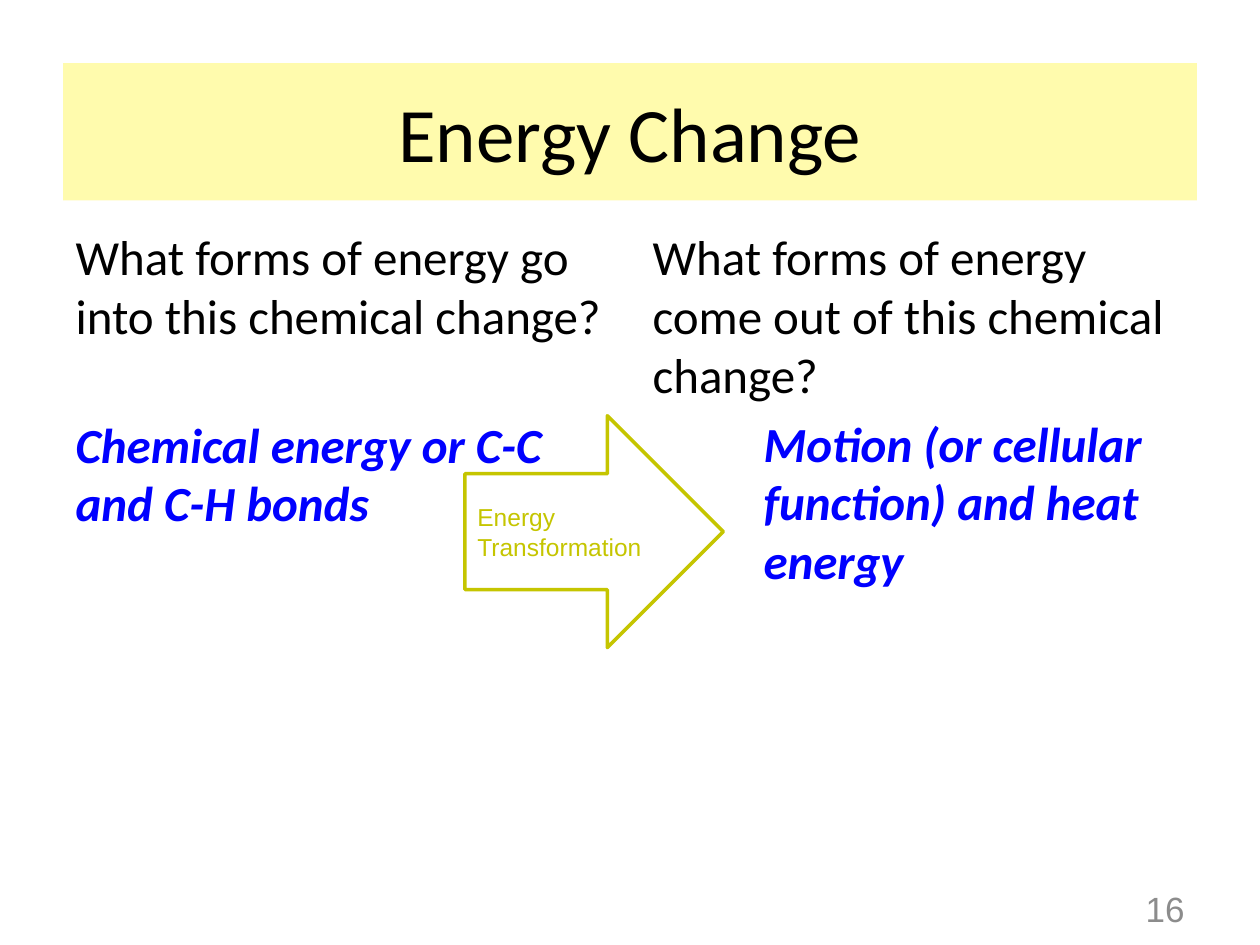
from lxml import etree
from pptx import Presentation
from pptx.dml.color import RGBColor
from pptx.enum.shapes import MSO_SHAPE
from pptx.enum.text import MSO_ANCHOR, MSO_AUTO_SIZE, PP_ALIGN
from pptx.oxml.ns import qn
from pptx.util import Inches, Pt

RIGHT_ARROW = MSO_SHAPE.RIGHT_ARROW
MIDDLE, TOP = MSO_ANCHOR.MIDDLE, MSO_ANCHOR.TOP
LEFT, CENTER, RIGHT = PP_ALIGN.LEFT, PP_ALIGN.CENTER, PP_ALIGN.RIGHT
NO_AUTOFIT = MSO_AUTO_SIZE.NONE

WIDTH, HEIGHT = 10, 7.5
MARGIN, GUTTER = 0.5, 0.16
COLUMN = (WIDTH - 2 * MARGIN - GUTTER) / 2
BODY_TOP, BODY_HEIGHT = 1.75, 4.95
LINE_GAP = 5.6          # 20% of the body size
EMPTY_LINE = 34.2       # one line of body text

COLORS = {
    "banner": "FFFBAD",
    "text": "000000",
    "answer": "0000FF",
    "arrow": "C5C500",
    "paper": "FFFFFF",
    "number": "8C8C8C",
}
QUESTION = {"name": "Calibri", "size": Pt(28), "bold": False, "italic": False}
ANSWER = {**QUESTION, "bold": True, "italic": True}


class EnergySlide:
    def __init__(self, prs):
        self.slide = prs.slides.add_slide(prs.slide_layouts[3])
        self.heading, *self.columns = self.slide.placeholders

    def rgb(self, key):
        return RGBColor.from_string(COLORS[key])

    def place(self, shape, left, top, width, height):
        box = {"left": left, "top": top, "width": width, "height": height}
        for side, inches in box.items():
            setattr(shape, side, Inches(inches))

    def frame(self, shape, anchor):
        frame = shape.text_frame
        settings = {"word_wrap": True, "auto_size": NO_AUTOFIT,
                    "vertical_anchor": anchor}
        for key, value in settings.items():
            setattr(frame, key, value)
        return frame

    def add_text(self, paragraph, text, font, color, align=LEFT):
        paragraph.alignment = align
        run = paragraph.add_run()
        run.text = text
        for key, value in font.items():
            setattr(run.font, key, value)
        run.font.color.rgb = self.rgb(color)

    def title(self, text):
        self.place(self.heading, MARGIN, 0.5, WIDTH - 2 * MARGIN, 1.09)
        self.heading.fill.solid()
        self.heading.fill.fore_color.rgb = self.rgb("banner")
        paragraph = self.frame(self.heading, MIDDLE).paragraphs[0]
        self.add_text(paragraph, text, {"name": "Calibri", "size": Pt(44)},
                      "text", CENTER)

    def question(self, index, question, answer, indent, gap):
        """Fill one column: a question, then its answer after gap points."""
        body = self.columns[index]
        left = MARGIN + index * (COLUMN + GUTTER)
        self.place(body, left, BODY_TOP, COLUMN, BODY_HEIGHT)
        frame = self.frame(body, TOP)
        asked, answered = frame.paragraphs[0], frame.add_paragraph()
        self.add_text(asked, question, QUESTION, "text")
        self.add_text(answered, answer, ANSWER, "answer")
        for paragraph, before, margin in ((asked, LINE_GAP, 0),
                                          (answered, gap, indent)):
            paragraph.space_before = Pt(before)
            properties = paragraph._p.get_or_add_pPr()
            properties.set("marL", str(Inches(margin)))
            properties.set("indent", "0")
            etree.SubElement(properties, qn("a:buNone"))

    def arrow(self, text, left, top, width, height):
        arrow = self.slide.shapes.add_shape(RIGHT_ARROW, 0, 0, 0, 0)
        self.place(arrow, left, top, width, height)
        arrow.shadow.inherit = False
        arrow.fill.solid()
        arrow.fill.fore_color.rgb = self.rgb("paper")
        arrow.line.color.rgb = self.rgb("arrow")
        arrow.line.width = Pt(2)
        paragraph = self.frame(arrow, MIDDLE).paragraphs[0]
        self.add_text(paragraph, text, {"name": "Arial", "size": Pt(14)},
                      "arrow")

    def page_number(self, text):
        number = self.slide.shapes.add_textbox(0, 0, 0, 0)
        width = 2.33
        self.place(number, WIDTH - MARGIN - width, 7.01, width, 0.4)
        paragraph = self.frame(number, MIDDLE).paragraphs[0]
        self.add_text(paragraph, text, {"name": "Arial", "size": Pt(20)},
                      "number", RIGHT)


def main():
    prs = Presentation()
    prs.slide_width, prs.slide_height = Inches(WIDTH), Inches(HEIGHT)
    energy = EnergySlide(prs)
    energy.title("Energy Change")
    energy.question(0, "What forms of energy go into this chemical change?",
                    "Chemical energy or C-C and C-H bonds",
                    indent=0, gap=LINE_GAP + EMPTY_LINE)
    energy.question(1, "What forms of energy come out of this chemical change?",
                    "Motion (or cellular function) and heat energy",
                    indent=0.88, gap=LINE_GAP)
    energy.page_number("16")
    energy.arrow("Energy Transformation", 3.69, 3.3, 2.05, 1.84)
    prs.save("out.pptx")


if __name__ == "__main__":
    main()
